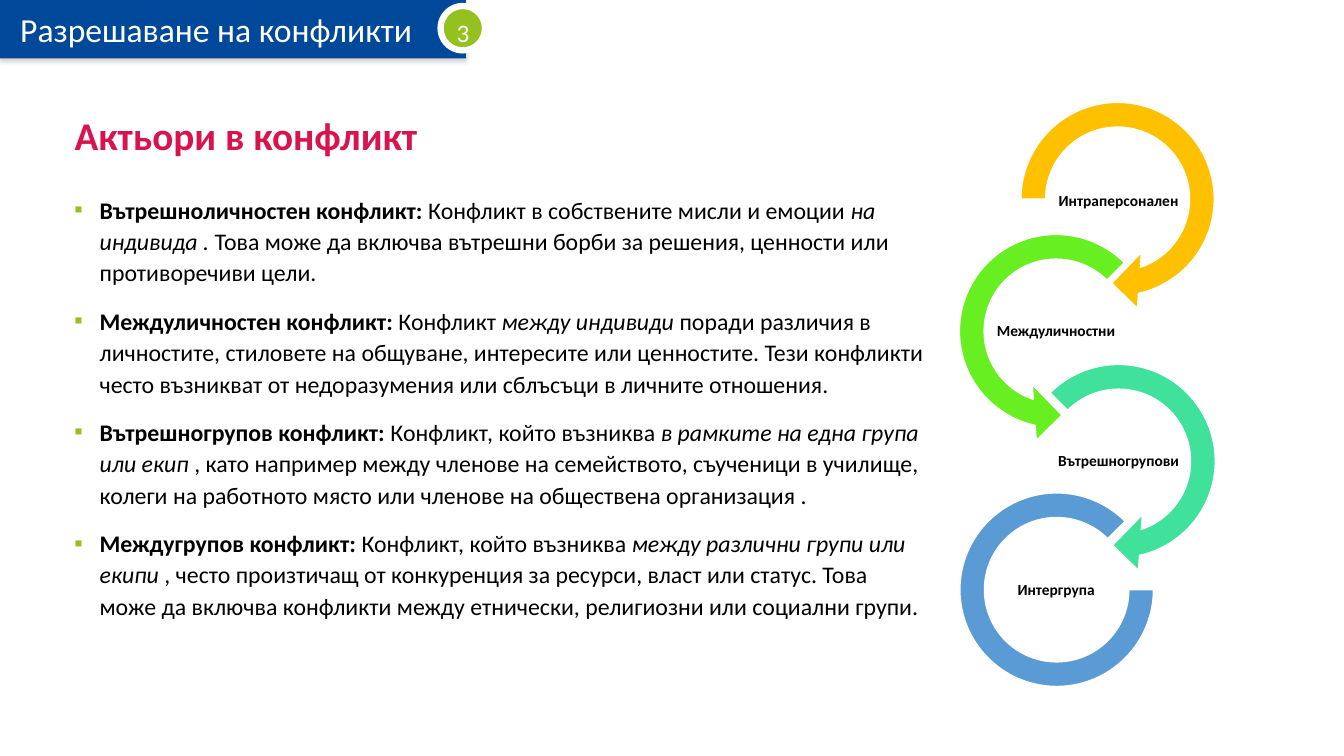
import lxml.etree
import pptx
import pptx.dml.color
import pptx.enum.shapes
import pptx.enum.text
import pptx.oxml
import pptx.oxml.ns
import pptx.util

Inches = pptx.util.Inches
Pt = pptx.util.Pt
SHAPE = pptx.enum.shapes.MSO_SHAPE
ALIGN = pptx.enum.text.PP_ALIGN
ANCHOR = pptx.enum.text.MSO_ANCHOR

FONT = "Calibri"
COLORS = {
    "banner": "004899", "accent": "95C11F", "title": "D8134D", "text": "000000",
    "white": "FFFFFF", "yellow": "FFC000", "green": "67EF21", "mint": "3FE19B",
    "blue": "5B9BD5", "shadow": "808080",
}

CONFLICTS = [
    ("Вътрешноличностен конфликт: ", "Конфликт в собствените мисли и емоции ",
     "на индивида . ",
     "Това може да включва вътрешни борби за решения, ценности или противоречиви цели."),
    ("Междуличностен конфликт: ", "Конфликт ", "между индивиди ",
     "поради различия в личностите, стиловете на общуване, интересите или ценностите. "
     "Тези конфликти често възникват от недоразумения или сблъсъци в личните отношения."),
    ("Вътрешногрупов конфликт: ", "Конфликт, който възниква ",
     "в рамките на една група или екип ",
     ", като например между членове на семейството, съученици в училище, "
     "колеги на работното място или членове на обществена организация ."),
    ("Междугрупов конфликт: ", "Конфликт, който възниква ",
     "между различни групи или екипи ",
     ", често произтичащ от конкуренция за ресурси, власт или статус. "
     "Това може да включва конфликти между етнически, религиозни или социални групи."),
]

ACTORS = [
    ("Интраперсонален", SHAPE.CIRCULAR_ARROW, (9.97, 0.86, 2.23),
     (0.11, 11.423, 45, 108, 0.125), "yellow", (10.47, 1.69)),
    ("Междуличностни", SHAPE.LEFT_CIRCULAR_ARROW, (9.36, 2.17, 2.23),
     (0.11, 11.423, 63, 189, 0.125), "green", (9.85, 2.98)),
    ("Вътрешногрупови", SHAPE.CIRCULAR_ARROW, (9.98, 3.46, 2.23),
     (0.11, 11.423, 45, 135, 0.125), "mint", (10.47, 4.27)),
    ("Интергрупа", SHAPE.BLOCK_ARC, (9.52, 4.89, 1.92),
     (0, 189, 0.127), "blue", (9.85, 5.55)),
]


def rgb(name):
    """Return the named colour."""
    return pptx.dml.color.RGBColor.from_string(COLORS[name])


def format_font(font, size, color, bold=False, italic=False):
    """Set the look of a font."""
    font.name = FONT
    font.size = Pt(size)
    font.bold = bold
    font.italic = italic
    font.color.rgb = rgb(color)


def set_line(frame, text, size, color, bold=False, spacing=1.0, align=ALIGN.LEFT):
    """Fill a text frame with one formatted line."""
    frame.text = text
    paragraph = frame.paragraphs[0]
    paragraph.alignment = align
    paragraph.line_spacing = spacing
    format_font(paragraph.runs[0].font, size, color, bold)


def add_shape(slide, kind, box, fill, line=None, width=1):
    """Add a filled preset shape without a theme shadow."""
    shape = slide.shapes.add_shape(kind, *map(Inches, box))
    shape.shadow.inherit = False
    shape.fill.solid()
    shape.fill.fore_color.rgb = rgb(fill)
    if line:
        shape.line.color.rgb = rgb(line)
        shape.line.width = Pt(width)
    else:
        shape.line.fill.background()
    return shape


def add_text_box(slide, box, anchor=ANCHOR.TOP):
    """Add a wrapping text box and return its text frame."""
    frame = slide.shapes.add_textbox(*map(Inches, box)).text_frame
    frame.word_wrap = True
    frame.vertical_anchor = anchor
    return frame


def add_drop_shadow(shape):
    """Give a shape a soft shadow below it."""
    effects = shape._element.spPr.find(pptx.oxml.ns.qn("a:effectLst"))
    effects.append(pptx.oxml.parse_xml(
        f'<a:outerShdw {pptx.oxml.ns.nsdecls("a")} blurRad="{Pt(3.1)}" dist="{Pt(1.8)}" '
        f'dir="5400000" algn="t" rotWithShape="0"><a:srgbClr val="{COLORS["shadow"]}">'
        '<a:alpha val="35000"/></a:srgbClr></a:outerShdw>'))


def add_bullet(paragraph):
    """Give a paragraph a hanging square bullet."""
    properties = paragraph._p.get_or_add_pPr()
    properties.set("marL", str(Inches(0.25)))
    properties.set("indent", str(-Inches(0.25)))
    qn = pptx.oxml.ns.qn
    color = lxml.etree.SubElement(properties, qn("a:buClr"))
    lxml.etree.SubElement(color, qn("a:srgbClr"), val=COLORS["accent"])
    lxml.etree.SubElement(properties, qn("a:buFont"), typeface=FONT)
    lxml.etree.SubElement(properties, qn("a:buChar"), char="▪")


def add_banner(slide):
    """Add the chapter banner with its number badge."""
    banner = add_shape(slide, SHAPE.RECTANGLE, (0, 0, 4.62, 0.58), "banner")
    add_drop_shadow(banner)
    frame = banner.text_frame
    frame.margin_left = Inches(0.2)
    frame.vertical_anchor = ANCHOR.MIDDLE
    set_line(frame, "Разрешаване на конфликти", 24, "white")
    add_shape(slide, SHAPE.OVAL, (4.37, 0.06, 0.44, 0.44), "accent", "white", 4.5)
    number = add_text_box(slide, (4.43, -0.03, 0.35, 0.51))
    set_line(number, "3", 18, "white", spacing=1.5)


def set_title(slide):
    """Place and format the title."""
    title = slide.shapes.title
    title.left, title.top, title.width, title.height = map(Inches, (0.64, 1.04, 4.08, 0.66))
    frame = title.text_frame
    frame.auto_size = pptx.enum.text.MSO_AUTO_SIZE.NONE
    frame.vertical_anchor = ANCHOR.MIDDLE
    set_line(frame, "Актьори в конфликт", 28, "title", bold=True, spacing=0.9)


def add_conflicts(slide):
    """Add the bulleted list of conflict types."""
    frame = add_text_box(slide, (0.64, 1.86, 8.64, 5.32))
    for index, (name, opening, parties, detail) in enumerate(CONFLICTS):
        paragraph = frame.add_paragraph() if index else frame.paragraphs[0]
        add_bullet(paragraph)
        paragraph.line_spacing = 1.1
        paragraph.space_before = Pt(6 if index else 0)
        paragraph.space_after = Pt(6)
        for text in (name, opening, parties, detail):
            run = paragraph.add_run()
            run.text = text
            format_font(run.font, 17, "text", bold=text == name, italic=text == parties)


def add_actor(slide, label, kind, place, adjustments, color, label_place):
    """Add one ring of the chain with its label."""
    left, top, size = place
    ring = add_shape(slide, kind, (left, top, size, size), color, "white")
    for index, value in enumerate(adjustments):
        ring.adjustments[index] = value
    frame = add_text_box(slide, (*label_place, 1.25, 0.62), ANCHOR.MIDDLE)
    frame.margin_left = frame.margin_right = Inches(0.01)
    frame.margin_top = frame.margin_bottom = Inches(0.01)
    set_line(frame, label, 11, "text", bold=True, spacing=0.9, align=ALIGN.CENTER)


def main():
    """Build the slide and save it."""
    presentation = pptx.Presentation()
    presentation.slide_width = Inches(13.33)
    presentation.slide_height = Inches(7.5)
    slide = presentation.slides.add_slide(presentation.slide_layouts[5])
    add_banner(slide)
    set_title(slide)
    add_conflicts(slide)
    for actor in ACTORS:
        add_actor(slide, *actor)
    presentation.save("out.pptx")


if __name__ == "__main__":
    main()
